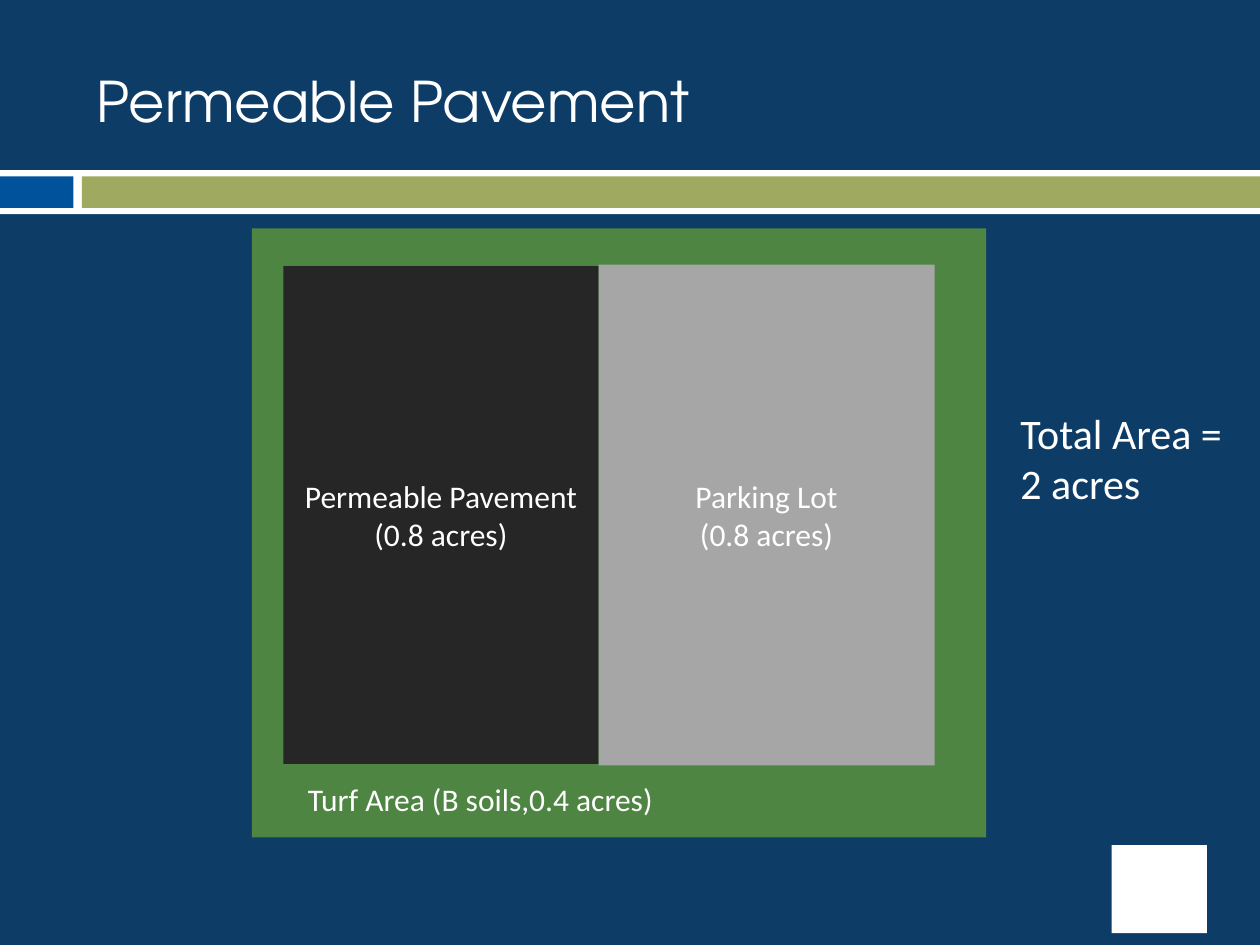
from lxml import etree
from pptx import Presentation
from pptx.dml.color import RGBColor
from pptx.enum.shapes import MSO_SHAPE
from pptx.enum.text import MSO_ANCHOR, PP_ALIGN
from pptx.oxml.ns import qn
from pptx.util import Inches, Pt

RECTANGLE = MSO_SHAPE.RECTANGLE
TOP, MIDDLE = MSO_ANCHOR.TOP, MSO_ANCHOR.MIDDLE
LEFT, CENTER = PP_ALIGN.LEFT, PP_ALIGN.CENTER

NAVY = RGBColor(0x0D, 0x3C, 0x67)
BLUE = RGBColor(0x00, 0x52, 0x9B)
OLIVE = RGBColor(0x7F, 0x8E, 0x2B)
TURF_GREEN = RGBColor(0x4E, 0x85, 0x42)
ASPHALT = RGBColor(0x26, 0x26, 0x26)
GRAY = RGBColor(0xA6, 0xA6, 0xA6)
WHITE = RGBColor(0xFF, 0xFF, 0xFF)

COLUMNS, ROWS = 40, 30
TITLE_FONT, BODY_FONT = "TeX Gyre Adventor", "Calibri"


class SlideBuilder:
    """Draws on one slide; every box is (column, row, columns wide, rows high)."""

    def __init__(self, prs):
        self.column = prs.slide_width / COLUMNS
        self.row = prs.slide_height / ROWS
        self.slide = prs.slides.add_slide(prs.slide_layouts[6])
        background = self.slide.background.fill
        background.solid()
        background.fore_color.rgb = NAVY

    def place(self, box):
        left, top, width, height = box
        return (round(left * self.column), round(top * self.row),
                round(width * self.column), round(height * self.row))

    def set_text(self, frame, lines, size, font, align, anchor):
        frame.word_wrap = True
        frame.vertical_anchor = anchor
        frame.text = "\n".join(lines)
        for paragraph in frame.paragraphs:
            paragraph.alignment = align
            paragraph.font.size = Pt(size)
            paragraph.font.name = font
            paragraph.font.color.rgb = WHITE

    def area(self, box, color, lines=(), opacity=100):
        shape = self.slide.shapes.add_shape(RECTANGLE, *self.place(box))
        shape.shadow.inherit = False
        shape.line.fill.background()
        shape.fill.solid()
        shape.fill.fore_color.rgb = color
        if opacity < 100:
            tint = shape._element.spPr.find(qn("a:solidFill"))[0]
            etree.SubElement(tint, qn("a:alpha"), val=str(opacity * 1000))
        if lines:
            self.set_text(shape.text_frame, lines, 18, BODY_FONT, CENTER, MIDDLE)

    def label(self, box, text, size, font=BODY_FONT, align=LEFT, anchor=TOP):
        textbox = self.slide.shapes.add_textbox(*self.place(box))
        self.set_text(textbox.text_frame, [text], size, font, align, anchor)


def main():
    prs = Presentation()
    prs.slide_width, prs.slide_height = Inches(10), Inches(7.5)
    builder = SlideBuilder(prs)

    # Title and the band below it
    builder.area((0, 5.4, COLUMNS, 1.4), WHITE)
    builder.area((0, 5.6, 2.33, 1), BLUE)
    builder.area((2.6, 5.6, COLUMNS - 2.6, 1), OLIVE, opacity=75)
    builder.area((35.29, 26.83, 3.03, 2.8), WHITE)
    builder.label((2.67, 1, 35.67, 4.33), "Permeable Pavement", 32,
                  font=TITLE_FONT, anchor=MIDDLE)

    # Site plan
    builder.area((8, 7.25, 23.31, 19.33), TURF_GREEN)
    builder.area((19, 8.4, 10.67, 15.9), GRAY, ["Parking Lot", "(0.8 acres)"])
    builder.area((9, 8.45, 10, 15.8), ASPHALT,
                 ["Permeable Pavement", "(0.8 acres)"])
    builder.label((8.15, 24.57, 14.2, 1.6), "Turf Area (B soils,0.4 acres)",
                  18, align=CENTER)
    builder.label((32, 12.73, 7.5, 3.63), "Total Area = 2 acres", 24)

    prs.save("out.pptx")


if __name__ == "__main__":
    main()
